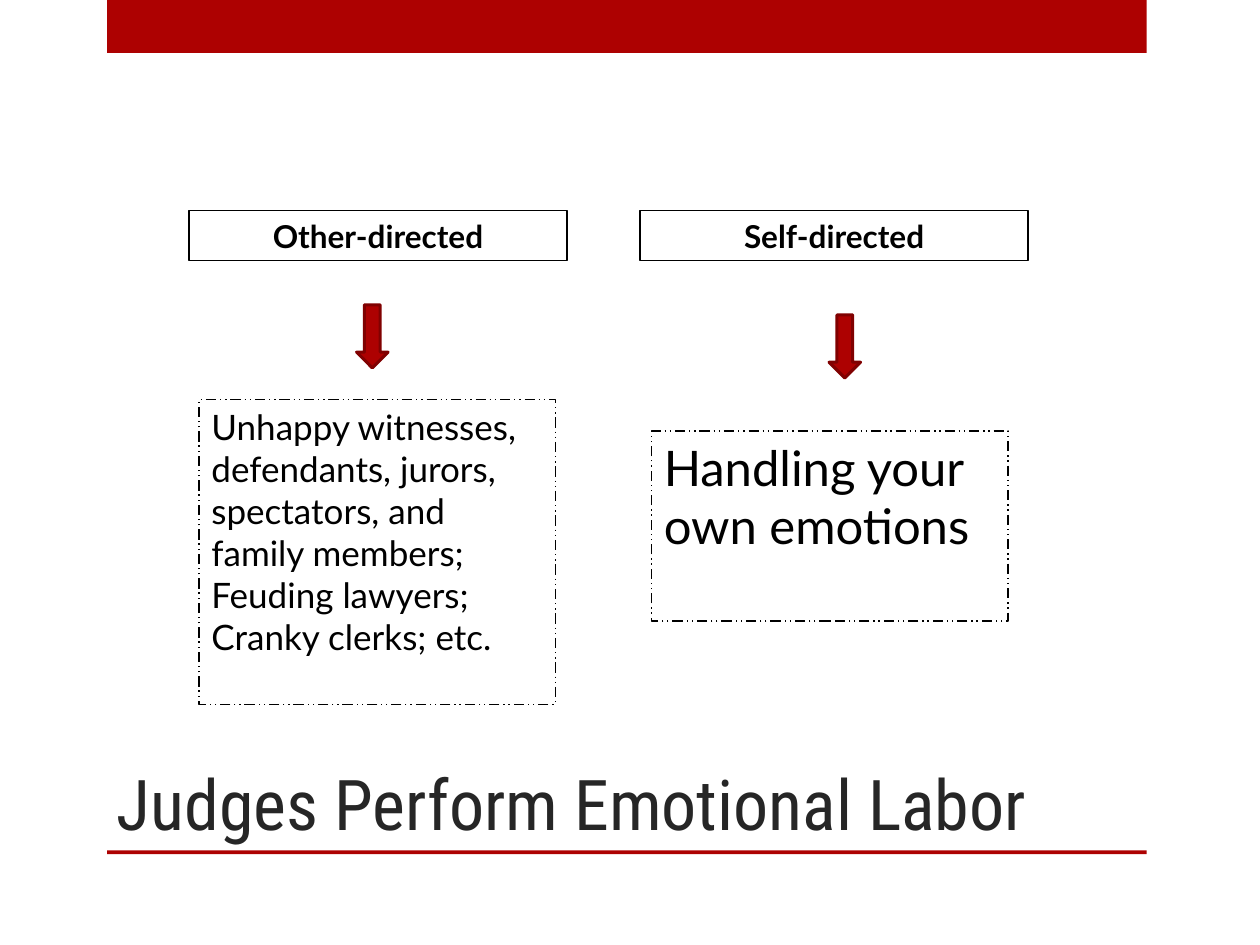
import pptx
import pptx.util
import pptx.dml.color
import pptx.enum.dml
import pptx.enum.shapes
import pptx.enum.text

Inches = pptx.util.Inches
SHAPE = pptx.enum.shapes.MSO_SHAPE
ALIGN = pptx.enum.text.PP_ALIGN
ANCHOR = pptx.enum.text.MSO_ANCHOR
DASH = pptx.enum.dml.MSO_LINE

COLORS = {"red": "AD0101", "dark red": "800101", "black": "000000", "title": "262626"}

TITLE = "Judges Perform Emotional Labor"
BARS = [(0.85, 0, 8.25, 0.42), (0.85, 6.75, 8.25, 0.03)]
COLUMNS = [
    {
        "heading": "Other-directed",
        "heading_at": (1.5, 1.67, 3, 0.4),
        "arrow_at": (2.83, 2.42, 0.25, 0.5),
        "details": [
            "Unhappy witnesses, defendants, jurors, spectators, and",
            "family members;",
            "Feuding lawyers;",
            "Cranky clerks; etc.",
        ],
        "details_at": (1.58, 3.17, 2.83, 2.42),
        "size": 20,
    },
    {
        "heading": "Self-directed",
        "heading_at": (5.08, 1.67, 3.08, 0.4),
        "arrow_at": (6.58, 2.5, 0.25, 0.5),
        "details": ["Handling your own emotions"],
        "details_at": (5.17, 3.42, 2.83, 1.51),
        "size": 28,
    },
]


def color(name):
    return pptx.dml.color.RGBColor.from_string(COLORS[name])


def add_shape(page, kind, place, fill=None, line=None, width=0.75):
    shape = page.shapes.add_shape(kind, *map(Inches, place))
    shape.shadow.inherit = False
    if fill:
        shape.fill.solid()
        shape.fill.fore_color.rgb = color(fill)
    else:
        shape.fill.background()
    if line:
        shape.line.color.rgb = color(line)
        shape.line.width = pptx.util.Pt(width)
    else:
        shape.line.fill.background()
    return shape


def write(box, lines, size, font="Lato", ink="black", bold=False,
          align=ALIGN.LEFT, anchor=ANCHOR.TOP):
    frame = box.text_frame
    frame.word_wrap = True
    frame.vertical_anchor = anchor
    frame.text = "\n".join(lines)
    for para in frame.paragraphs:
        para.alignment = align
        para.font.name = font
        para.font.size = pptx.util.Pt(size)
        para.font.bold = bold
        para.font.color.rgb = color(ink)


def main():
    deck = pptx.Presentation()
    deck.slide_width, deck.slide_height = Inches(10), Inches(7.5)
    page = deck.slides.add_slide(deck.slide_layouts[6])

    for place in BARS:
        add_shape(page, SHAPE.RECTANGLE, place, fill="red")

    for column in COLUMNS:
        heading = add_shape(page, SHAPE.RECTANGLE, column["heading_at"], line="black")
        write(heading, [column["heading"]], 18, bold=True, align=ALIGN.CENTER)
        add_shape(page, SHAPE.DOWN_ARROW, column["arrow_at"], "red", "dark red", 1.75)
        details = add_shape(page, SHAPE.RECTANGLE, column["details_at"], line="black")
        details.line.dash_style = DASH.DASH_DOT_DOT
        write(details, column["details"], column["size"])

    title = page.shapes.add_textbox(*map(Inches, (0.83, 5, 7.75, 1.75)))
    write(title, [TITLE], 40, "Roboto Condensed", "title", anchor=ANCHOR.BOTTOM)

    deck.save("out.pptx")


if __name__ == "__main__":
    main()
